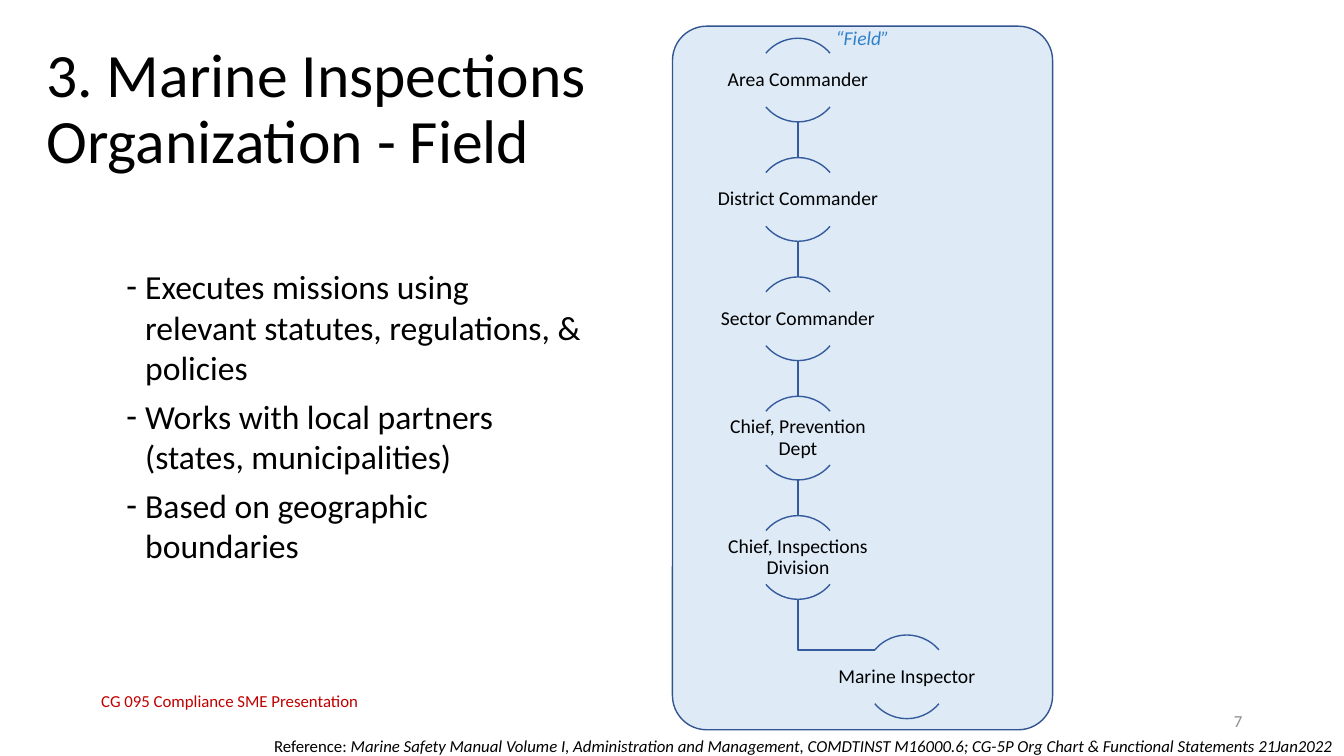
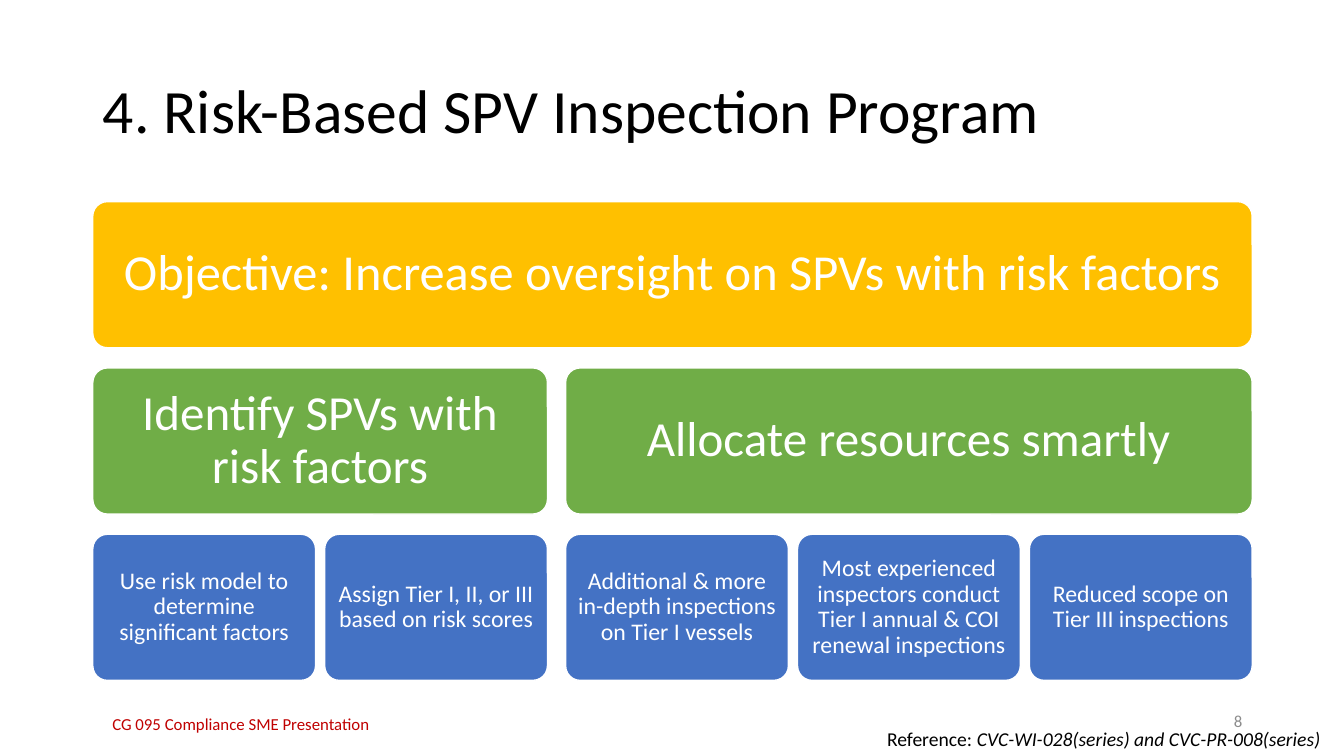
from dataclasses import dataclass

from lxml.etree import SubElement
from pptx import Presentation
from pptx.dml.color import RGBColor
from pptx.enum.shapes import MSO_CONNECTOR as Link, MSO_SHAPE as Preset
from pptx.enum.text import MSO_ANCHOR as Anchor, MSO_AUTO_SIZE as AutoSize, PP_ALIGN as Align
from pptx.oxml.ns import qn
from pptx.util import Inches, Pt


@dataclass(frozen=True)
class Theme:
    font: str = "Calibri"
    ink: str = "000000"
    white: str = "FFFFFF"
    panel: str = "DEEBF7"
    panel_line: str = "325491"
    chart_line: str = "365B9D"
    field: str = "3181C9"
    footer: str = "C00000"
    number: str = "8C8C8C"
    objective: str = "FFC000"
    goal: str = "70AD47"
    action: str = "4472C4"
    title_size: int = 44
    body_size: int = 24
    label_size: int = 14
    footer_size: int = 12
    objective_size: int = 36
    goal_size: int = 35
    action_size: int = 17


THEME = Theme()
FOOTER = "CG 095 Compliance SME Presentation"

FIELD = {
    "title": "3. Marine Inspections \nOrganization - Field",
    "title_box": (0.36, 0.37, 12.06, 1.45),
    "footer_at": (0.03, 6.75),
    "number": "7",
    "reference": "Marine Safety Manual Volume I, Administration and Management, "
                 "COMDTINST M16000.6; CG-5P Org Chart & Functional Statements 21Jan2022",
    "reference_box": (2.62, 7.25, 10.86, 0.3),
    "reference_size": 12,
}
FIELD_POINTS = [
    "Executes missions using relevant statutes, regulations, & policies",
    "Works with local partners (states, municipalities)",
    "Based on geographic boundaries",
]
COMMAND_CHAIN = [
    "Area Commander", "District Commander", "Sector Commander",
    "Chief, Prevention Dept", "Chief, Inspections Division", "Marine Inspector",
]

RISK = {
    "title": "4. Risk-Based SPV Inspection Program",
    "title_box": (0.92, 0.4, 11.5, 1.45),
    "footer_at": (0.14, 6.98),
    "number": "8",
    "reference": "CVC-WI-028(series) and CVC-PR-008(series)",
    "reference_box": (8.7, 7.16, 4.63, 0.34),
    "reference_size": 14,
}
OBJECTIVE = "Objective: Increase oversight on SPVs with risk factors"
GOALS = [
    ("Identify SPVs with risk factors", [
        "Use risk model to determine significant factors",
        "Assign Tier I, II, or III based on risk scores",
    ]),
    ("Allocate resources smartly", [
        "Additional & more in-depth inspections on Tier I vessels",
        "Most experienced inspectors conduct Tier I annual & COI renewal inspections",
        "Reduced scope on Tier III inspections",
    ]),
]


def inches(*values):
    return [Inches(value) for value in values]


def place(shape, box):
    shape.left, shape.top, shape.width, shape.height = inches(*box)


def write(shape, *paragraphs, size, color=THEME.ink, align=Align.LEFT, anchor=Anchor.TOP,
          inset=None, spacing=1.0, after=0, bullet=None):
    """Fill a shape; each paragraph is a string or a list of (text, italic) spans."""
    frame = shape.text_frame
    frame.word_wrap = True
    frame.auto_size = AutoSize.NONE
    frame.vertical_anchor = anchor
    if inset is not None:
        frame.margin_left = frame.margin_top = Inches(inset)
        frame.margin_right = frame.margin_bottom = Inches(inset)
    for index, content in enumerate(paragraphs):
        para = frame.add_paragraph() if index else frame.paragraphs[0]
        para.alignment, para.line_spacing = align, spacing
        para.space_before, para.space_after = Pt(0), Pt(after)
        if bullet:
            properties = para._p.get_or_add_pPr()
            properties.set("marL", str(Inches(0.19)))
            properties.set("indent", str(-Inches(0.19)))
            SubElement(properties, qn("a:buChar")).set("char", bullet)
        for text, italic in [(content, False)] if isinstance(content, str) else content:
            for number, line in enumerate(text.split("\n")):
                if number:
                    para.add_line_break()
                span = para.add_run()
                span.text = line
                span.font.name, span.font.size = THEME.font, Pt(size)
                span.font.italic = italic
                span.font.color.rgb = RGBColor.from_string(color)


def add_text(page, box, *paragraphs, **style):
    write(page.shapes.add_textbox(*inches(*box)), *paragraphs, **style)


def paint(shape, fill, line):
    shape.shadow.inherit = False
    if fill:
        shape.fill.solid()
        shape.fill.fore_color.rgb = RGBColor.from_string(fill)
    else:
        shape.fill.background()
    shape.line.color.rgb = RGBColor.from_string(line)
    shape.line.width = Pt(1)


def add_preset(page, preset, box, line, fill=None, adjust=()):
    shape = page.shapes.add_shape(preset, *inches(*box))
    paint(shape, fill, line)
    for index, value in enumerate(adjust):
        shape.adjustments[index] = value
    return shape


def add_page(deck, layout, content):
    """Add a slide with its title, reference, footer and page number."""
    page = deck.slides.add_slide(deck.slide_layouts[layout])
    place(page.shapes.title, content["title_box"])
    write(page.shapes.title, content["title"], size=THEME.title_size,
          anchor=Anchor.MIDDLE, spacing=0.9)
    add_text(page, content["reference_box"],
             [("Reference: ", False), (content["reference"], True)],
             size=content["reference_size"])
    add_text(page, (*content["footer_at"], 4.5, 0.4), FOOTER, size=THEME.footer_size,
             color=THEME.footer, align=Align.CENTER, anchor=Anchor.MIDDLE)
    add_text(page, (9.42, 6.95, 3, 0.4), content["number"], size=THEME.footer_size,
             color=THEME.number, align=Align.RIGHT, anchor=Anchor.MIDDLE)
    return page


def add_drop(page, x, top, bottom):
    drop = page.shapes.add_connector(Link.STRAIGHT, *inches(x, top, x, bottom))
    drop.line.color.rgb = RGBColor.from_string(THEME.chart_line)
    drop.line.width = Pt(1)
    SubElement(drop._element.spPr, qn("a:effectLst"))


def add_command_chain(page):
    size, left, first, last, shift = 0.83, 7.5, 0.38, 6.3, 1.08
    pitch = (last - first) / (len(COMMAND_CHAIN) - 1)
    center = left + size / 2
    final = len(COMMAND_CHAIN) - 1
    for index, role in enumerate(COMMAND_CHAIN):
        x = left + (shift if index == final else 0)
        y = first + index * pitch
        for angles in ((132, 192), (24, 84)):
            add_preset(page, Preset.ARC, (x, y, size, size), THEME.chart_line, adjust=angles)
        add_text(page, (x - 0.42, y + 0.15, 1.67, 0.53), role, size=THEME.label_size,
                 align=Align.CENTER, anchor=Anchor.MIDDLE, inset=0.01, spacing=0.9)
        if 0 < index < final:
            add_drop(page, center, y - pitch + size, y)
    branch = page.shapes.build_freeform(*inches(center, last - pitch + size))
    branch.add_line_segments([inches(center, 6.45), inches(8.68, 6.45)], close=False)
    paint(branch.convert_to_shape(), None, THEME.chart_line)


def build_field(deck):
    page = add_page(deck, 1, FIELD)
    body = page.placeholders[1]
    place(body, (1.15, 2.59, 4.73, 3.58))
    write(body, *FIELD_POINTS, size=THEME.body_size, after=6, bullet="-")
    add_preset(page, Preset.ROUNDED_RECTANGLE, (6.67, 0.26, 3.77, 6.98),
               THEME.panel_line, fill=THEME.panel, adjust=[0.09])
    add_command_chain(page)
    add_text(page, (7.89, 0.21, 1.33, 0.34), [("“Field”", True)], size=THEME.label_size,
             color=THEME.field, align=Align.CENTER)


def add_card(page, box, text, fill, size, inset=0.15):
    card = add_preset(page, Preset.ROUNDED_RECTANGLE, box, THEME.white, fill=fill, adjust=[0.1])
    write(card, text, size=size, color=THEME.white, align=Align.CENTER,
          anchor=Anchor.MIDDLE, inset=inset, spacing=0.9)


def build_risk(deck):
    page = add_page(deck, 5, RISK)
    left, width, height = 0.92, 11.5, 1.45
    top, goal_top, action_top = (2 + 1.65 * row for row in range(3))
    card_width, gap, goal_gap = 2.21, 0.09, 0.18
    add_card(page, (left, top, width, height), OBJECTIVE, THEME.objective, THEME.objective_size)
    x = left
    for goal, actions in GOALS:
        goal_width = len(actions) * (card_width + gap) - gap
        add_card(page, (x, goal_top, goal_width, height), goal, THEME.goal, THEME.goal_size)
        for index, action in enumerate(actions):
            add_card(page, (x + index * (card_width + gap), action_top, card_width, height),
                     action, THEME.action, THEME.action_size, inset=0.07)
        x += goal_width + goal_gap


def main():
    deck = Presentation()
    deck.slide_width, deck.slide_height = inches(13.33, 7.5)
    build_field(deck)
    build_risk(deck)
    deck.save("out.pptx")


if __name__ == "__main__":
    main()
